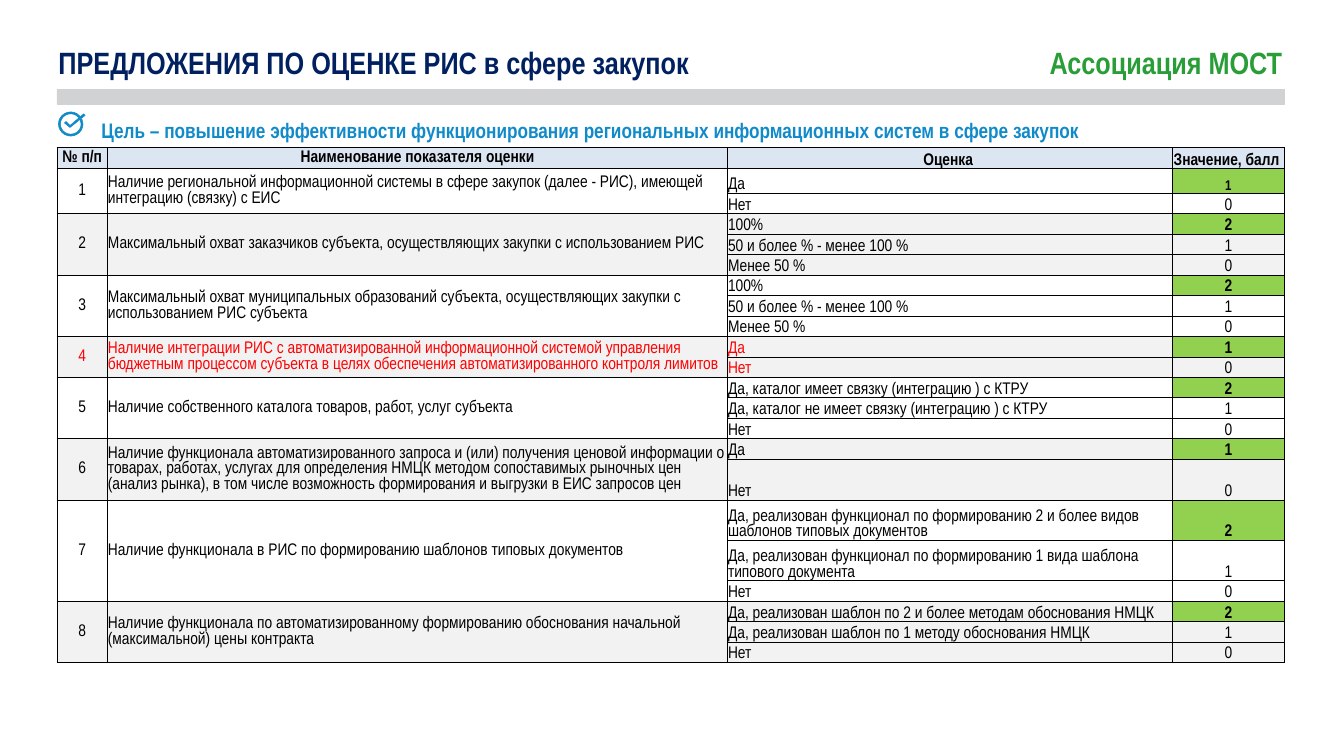
from lxml.etree import SubElement
from pptx import Presentation
from pptx.dml.color import RGBColor
from pptx.enum.shapes import MSO_SHAPE
from pptx.enum.text import MSO_ANCHOR, MSO_AUTO_SIZE, PP_ALIGN
from pptx.oxml import parse_xml
from pptx.oxml.ns import nsdecls, qn
from pptx.util import Inches, Pt

W, H = Inches(26.68), Inches(15)
LEFT, WIDE = W * 0.0424, W * 0.9131
ROW = H * 0.02707
FONT = "Arial Narrow"
C = {
    "navy": "002060", "green": "299D37", "blue": "108AC9", "bar": "D0D2D3",
    "head": "DCE6F2", "band": "F2F2F2", "white": "FFFFFF", "best": "92D050",
    "red": "FF0000", "black": "000000",
}
COLS = [0.0411, 0.5053, 0.3627, 0.0909]
HEADS = ["№ п/п", "Наименование показателя оценки", "Оценка ", "Значение, балл "]
SHARES = ["100%", "50 и более % - менее 100 %", "Менее 50 %"]
CRITERIA = [
    ("Наличие региональной информационной системы в сфере закупок (далее - РИС), имеющей интеграцию (связку) с ЕИС",
     ["Да", "Нет"], [1.2, 1]),
    ("Максимальный охват заказчиков субъекта, осуществляющих закупки с использованием РИС",
     SHARES, [1, 1, 1]),
    ("Максимальный охват муниципальных образований субъекта, осуществляющих закупки с использованием РИС субъекта",
     SHARES, [1, 1, 1]),
    ("Наличие интеграции РИС с автоматизированной информационной системой управления бюджетным процессом субъекта в целях обеспечения автоматизированного контроля лимитов",
     ["Да", "Нет"], [1, 1]),
    ("Наличие собственного каталога товаров, работ, услуг субъекта",
     ["Да, каталог имеет связку (интеграцию ) с КТРУ",
      "Да, каталог не имеет связку (интеграцию ) с КТРУ", "Нет"], [1, 1, 1]),
    ("Наличие функционала автоматизированного запроса и (или) получения ценовой информации о товарах, работах, услугах для определения НМЦК методом сопоставимых рыночных цен (анализ рынка), в том числе возможность формирования и выгрузки в ЕИС запросов цен",
     ["Да", "Нет"], [1, 2]),
    ("Наличие функционала в РИС по формированию шаблонов типовых документов",
     ["Да, реализован функционал по формированию 2 и более видов шаблонов типовых документов",
      "Да, реализован функционал по формированию 1 вида шаблона типового документа", "Нет"], [1.97, 1.97, 1]),
    ("Наличие функционала по автоматизированному формированию обоснования начальной (максимальной) цены контракта",
     ["Да, реализован шаблон по 2 и более методам обоснования НМЦК",
      "Да, реализован шаблон по 1 методу обоснования НМЦК", "Нет"], [1, 1, 1]),
]


def style(p, size, bold, color):
    p.font.name = FONT
    p.font.size = Pt(size)
    p.font.bold = bold
    p.font.color.rgb = RGBColor.from_string(C[color])


def fill_cell(cell, text, fill, color="black", bold=False, size=24, center=True, anchor=MSO_ANCHOR.BOTTOM):
    cell.fill.solid()
    cell.fill.fore_color.rgb = RGBColor.from_string(C[fill])
    cell.margin_left = cell.margin_right = cell.margin_top = Inches(0.01)
    cell.margin_bottom = 0
    cell.vertical_anchor = anchor
    p = cell.text_frame.paragraphs[0]
    p.text = text
    p.alignment = PP_ALIGN.CENTER if center else PP_ALIGN.LEFT
    style(p, size, bold, color)


prs = Presentation()
prs.slide_width, prs.slide_height = W, H
s = prs.slides.add_slide(prs.slide_layouts[5])

title = s.shapes.title
subtitle = s.shapes.add_textbox(0, 0, W, H)
for sp, x, y, w, h in [(title, 0.0435, 0.041, 0.915, 0.07), (subtitle, 0.0754, 0.153, 0.885, 0.036)]:
    sp.left, sp.top, sp.width, sp.height = int(W * x), int(H * y), int(W * w), int(H * h)
    tf = sp.text_frame
    tf.word_wrap = True
    tf.auto_size = MSO_AUTO_SIZE.NONE
    tf.vertical_anchor = MSO_ANCHOR.TOP
    tf.margin_left = tf.margin_right = tf.margin_top = 0
    tf.margin_bottom = Inches(0.05)

p = title.text_frame.paragraphs[0]
p.alignment = PP_ALIGN.LEFT
tabs = SubElement(p._p.get_or_add_pPr(), qn("a:tabLst"))
SubElement(tabs, qn("a:tab"), pos=str(int(W * 0.9107)), algn="r")
p.line_spacing = Pt(71.2)
style(p, 44, True, "navy")
p.add_run().text = "ПРЕДЛОЖЕНИЯ ПО ОЦЕНКЕ РИС в сфере закупок\t"
r = p.add_run()
r.text = "Ассоциация МОСТ"
r.font.color.rgb = RGBColor.from_string(C["green"])

p = subtitle.text_frame.paragraphs[0]
p.text = "Цель – повышение эффективности функционирования региональных информационных систем в сфере закупок"
p.line_spacing = Pt(38)
style(p, 30, True, "blue")

bar = s.shapes.add_shape(MSO_SHAPE.RECTANGLE, int(LEFT), int(H * 0.1187), int(WIDE), int(H * 0.0187))
ring = s.shapes.add_shape(MSO_SHAPE.BLOCK_ARC, int(W * 0.0435), int(H * 0.148), int(W * 0.0183), int(H * 0.032))
ring.adjustments[0] = 336 * 0.6
ring.adjustments[1] = 324 * 0.6
ring.adjustments[2] = 0.08
outline = [(1.69, 2.29), (1.39, 2.53), (1.28, 2.44), (1.31, 2.41), (1.39, 2.49), (1.66, 2.26)]
pts = [(Inches(x), Inches(y)) for x, y in outline]
fb = s.shapes.build_freeform(*pts[0])
fb.add_line_segments(pts[1:])
tick = fb.convert_to_shape()
for sp, color in [(bar, "bar"), (ring, "blue"), (tick, "blue")]:
    sp.shadow.inherit = False
    sp.fill.solid()
    sp.fill.fore_color.rgb = RGBColor.from_string(C[color])
    sp.line.fill.solid()
    sp.line.fill.fore_color.rgb = RGBColor.from_string(C[color])
    sp.line.width = 0

heights = [1.05] + [h for _, _, hs in CRITERIA for h in hs]
table = s.shapes.add_table(len(heights), len(COLS), int(LEFT), int(H * 0.1947),
                           int(WIDE), int(ROW * sum(heights))).table
table.first_row = table.horz_banding = False
for col, share in zip(table.columns, COLS):
    col.width = int(WIDE * share)
for row, h in zip(table.rows, heights):
    row.height = int(ROW * h)

for i, text in enumerate(HEADS):
    fill_cell(table.cell(0, i), text, "head", bold=True,
              anchor=MSO_ANCHOR.MIDDLE if i < 2 else MSO_ANCHOR.BOTTOM)

top = 1
for n, (name, options, _) in enumerate(CRITERIA, 1):
    fill = "white" if n % 2 else "band"
    color = "red" if n == 4 else "black"
    last = top + len(options) - 1
    for i, text in enumerate([str(n), name]):
        table.cell(top, i).merge(table.cell(last, i))
        fill_cell(table.cell(top, i), text, fill, color, center=i == 0, anchor=MSO_ANCHOR.MIDDLE)
    for k, option in enumerate(options):
        fill_cell(table.cell(top + k, 2), option, fill, color, center=False)
        fill_cell(table.cell(top + k, 3), str(len(options) - 1 - k), "best" if k == 0 else fill,
                  bold=k == 0, size=20 if top + k == 1 else 24)
    top = last + 1

for cell in table.iter_cells():
    for i, side in enumerate(["lnL", "lnR", "lnT", "lnB"]):
        cell._tc.get_or_add_tcPr().insert(i, parse_xml(
            f'<a:{side} {nsdecls("a")} w="12700"><a:solidFill><a:srgbClr val="{C["black"]}"/>'
            f'</a:solidFill></a:{side}>'))

prs.save("out.pptx")
